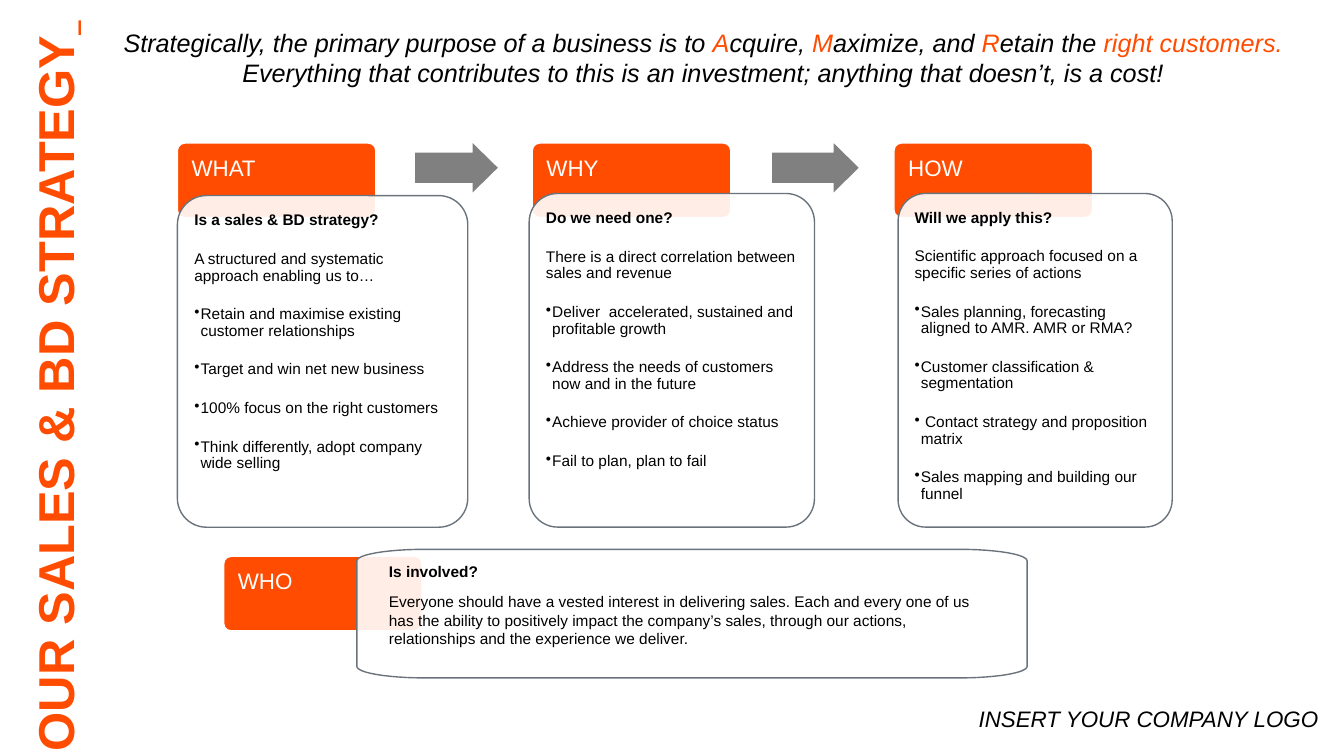
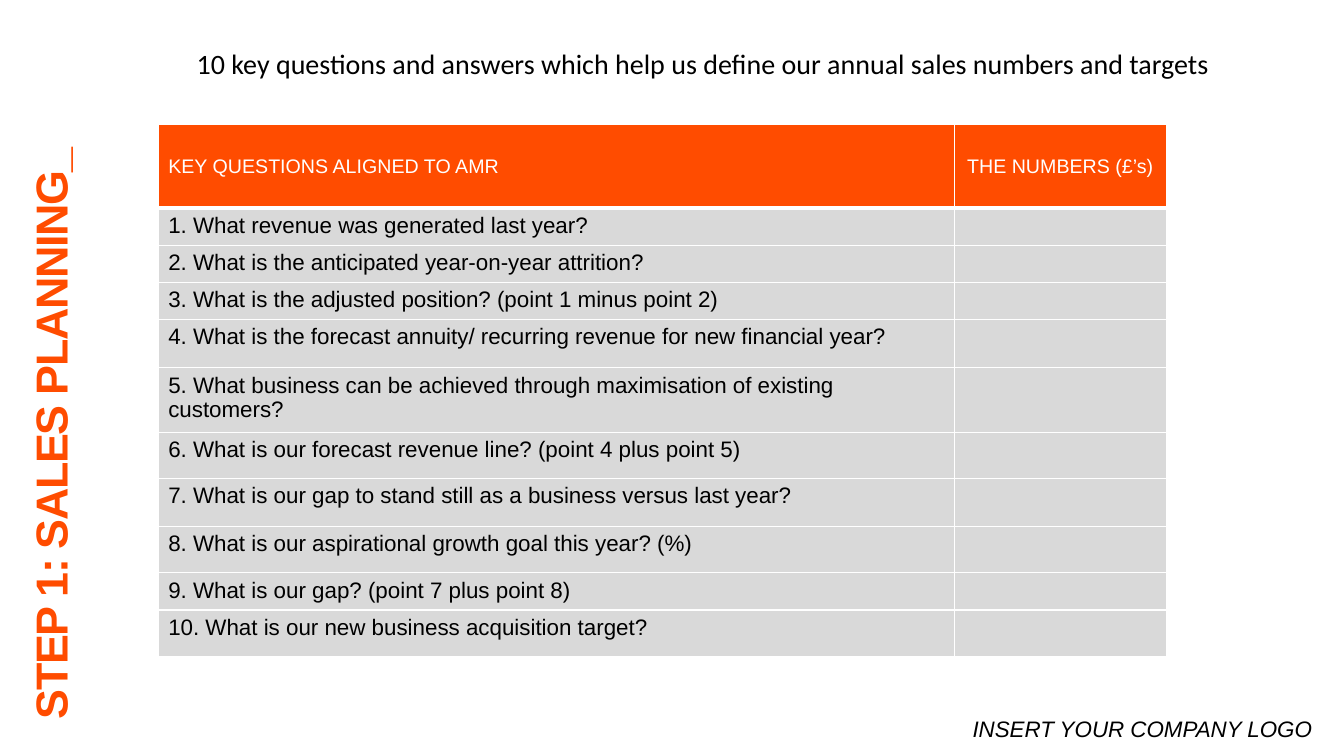
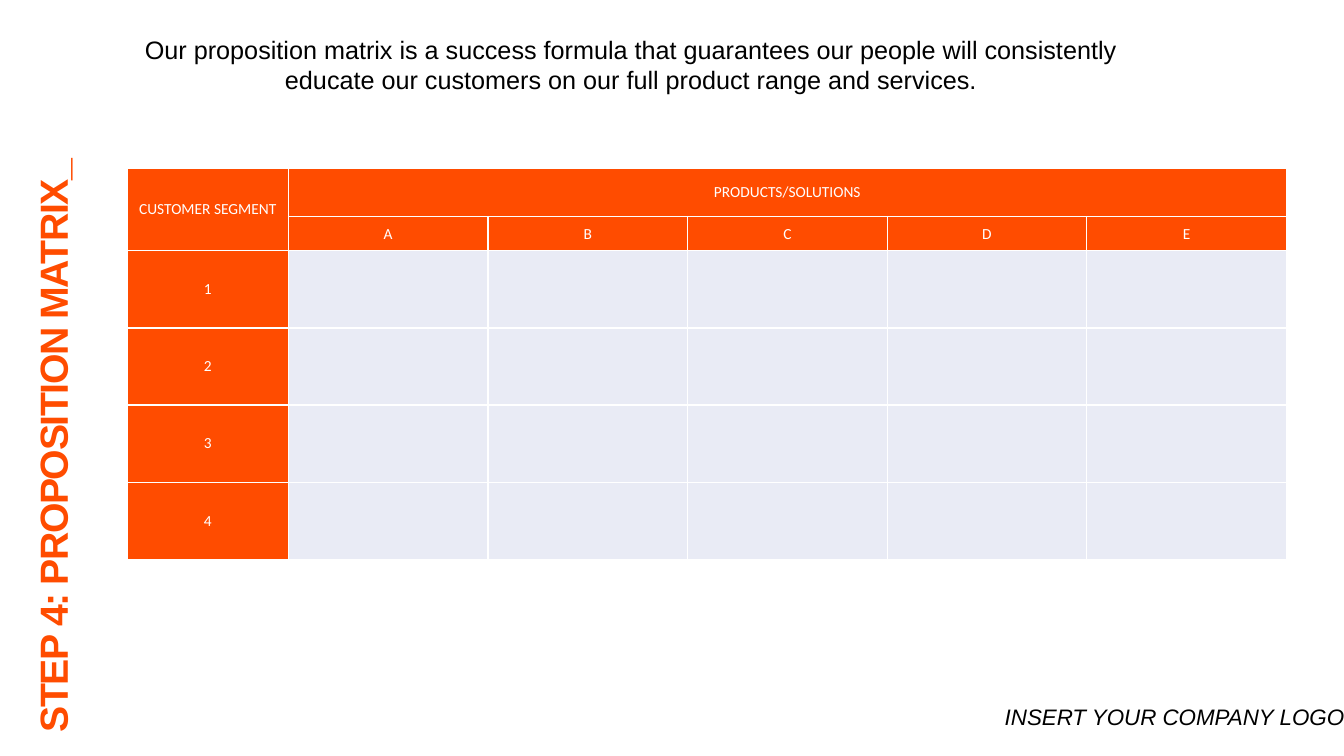
import math
from collections import namedtuple

import lxml.etree
import pptx
import pptx.dml.color
import pptx.enum.shapes
import pptx.enum.text
import pptx.oxml.ns
import pptx.util

Pt = pptx.util.Pt
Color = pptx.dml.color.RGBColor
Shape = pptx.enum.shapes.MSO_SHAPE
Align = pptx.enum.text.PP_ALIGN
Anchor = pptx.enum.text.MSO_ANCHOR
qn = pptx.oxml.ns.qn
Box = namedtuple("Box", "left top width height")

ORANGE = Color(0xFF, 0x4C, 0x00)
WHITE = Color(0xFF, 0xFF, 0xFF)
BLACK = Color(0x00, 0x00, 0x00)
GREY = Color(0x80, 0x80, 0x80)
SLATE = Color(0x6A, 0x73, 0x7B)
SILVER = Color(0xD9, 0xD9, 0xD9)
PALE_BLUE = Color(0xE9, 0xEB, 0xF5)
TITLE_ONLY = 5
TAB_WIDTH, TAB_HEIGHT = 141.8, 53.3

COLUMNS = [
    ("WHAT", 126.7, Box(126.7, 139.7, 207.4, 236.9), "Is a sales & BD strategy?",
     "A structured and systematic approach enabling us to…",
     ["Retain and maximise existing customer relationships",
      "Target and win net new business",
      "100% focus on the right customers",
      "Think differently, adopt company wide selling"]),
    ("WHY", 380.2, Box(378, 138.2, 203.8, 238.3), "Do we need one?",
     "There is a direct correlation between sales and revenue",
     ["Deliver  accelerated, sustained and profitable growth",
      "Address the needs of customers now and in the future",
      "Achieve provider of choice status",
      "Fail to plan, plan to fail"]),
    ("HOW", 638.6, Box(641.5, 138.2, 195.8, 238.3), "Will we apply this?",
     "Scientific approach focused on a specific series of actions",
     ["Sales planning, forecasting aligned to AMR. AMR or RMA?",
      "Customer classification & segmentation",
      " Contact strategy and proposition matrix",
      "Sales mapping and building our funnel"]),
]
QUESTIONS = [
    ("1. What revenue was generated last year?", 26.5),
    ("2. What is the anticipated year-on-year attrition?", 26.5),
    ("3. What is the adjusted position? (point 1 minus point 2)", 26.5),
    ("4. What is the forecast annuity/ recurring revenue for new financial year?", 34.5),
    ("5. What business can be achieved through maximisation of existing customers?", 46),
    ("6. What is our forecast revenue line? (point 4 plus point 5)", 33),
    ("7. What is our gap to stand still as a business versus last year?", 34.5),
    ("8. What is our aspirational growth goal this year? (%)", 33),
    ("9. What is our gap? (point 7 plus point 8)", 26.5),
    ("10. What is our new business acquisition target?", 33),
]


def points(box):
    return [Pt(length) for length in box]


def add_text(frame, text, size=11, color=BLACK, font="Arial", bold=False, italic=False,
             align=None, line=None, before=None, after=None, bullet=False, tracking=None):
    para = frame.add_paragraph() if frame.text else frame.paragraphs[0]
    para.alignment = align
    para.line_spacing = line
    para.space_before = None if before is None else Pt(before)
    para.space_after = None if after is None else Pt(after)
    if bullet:
        properties = para._p.get_or_add_pPr()
        properties.set("marL", str(Pt(4.5)))
        properties.set("indent", str(Pt(-4.5)))
        lxml.etree.SubElement(properties, qn("a:buChar")).set("char", "•")
    for words, shade in [(text, color)] if isinstance(text, str) else text:
        span = para.add_run()
        span.text = words
        span.font.name = font
        span.font.size = Pt(size)
        span.font.bold = bold
        span.font.italic = italic
        span.font.color.rgb = shade
        if tracking:
            span._r.get_or_add_rPr().set("spc", str(tracking))
    return para


def set_insets(frame, inset):
    frame.margin_left = frame.margin_right = Pt(inset)
    frame.margin_top = frame.margin_bottom = Pt(inset)


def style_shape(shape, fill, line=None, opacity=None):
    shape.shadow.inherit = False
    shape.fill.solid()
    shape.fill.fore_color.rgb = fill
    if opacity:
        color = shape._element.spPr.find(qn("a:solidFill"))[0]
        lxml.etree.SubElement(color, qn("a:alpha")).set("val", str(opacity * 1000))
    if line is None:
        shape.line.fill.background()
    else:
        shape.line.color.rgb = line
        shape.line.width = Pt(1)


def add_text_box(page, box, text, wrap=True, **style):
    frame = page.shapes.add_textbox(*points(box)).text_frame
    frame.word_wrap = wrap
    add_text(frame, text, **style)
    return frame


def add_page(deck, title, band, size, footer, tracking=None):
    page = deck.slides.add_slide(deck.slide_layouts[TITLE_ONLY])
    heading = page.shapes.title
    heading.left = Pt(band.left + (band.width - band.height) / 2)
    heading.top = Pt(band.top + (band.height - band.width) / 2)
    heading.width, heading.height = Pt(band.height), Pt(band.width)
    heading.rotation = 270
    frame = heading.text_frame
    frame.word_wrap = False
    frame.auto_size = pptx.enum.text.MSO_AUTO_SIZE.NONE
    frame.vertical_anchor = Anchor.TOP
    add_text(frame, title, size=size, color=ORANGE, bold=True, align=Align.JUSTIFY,
             before=0, tracking=tracking)
    add_text_box(page, Box(*footer, 260, 26.6), "INSERT YOUR COMPANY LOGO",
                 wrap=False, size=16, italic=True)
    return page


def add_tab(page, box, label):
    tab = page.shapes.add_shape(Shape.ROUNDED_RECTANGLE, *points(box))
    tab.adjustments[0] = 0.1
    style_shape(tab, ORANGE, WHITE)
    frame = tab.text_frame
    set_insets(frame, 8.6)
    frame.vertical_anchor = Anchor.TOP
    add_text(frame, label, size=16, color=WHITE, align=Align.LEFT, line=0.9)


def add_card(page, box, question, answer, bullets):
    card = page.shapes.add_shape(Shape.ROUNDED_RECTANGLE, *points(box))
    card.adjustments[0] = 0.1
    style_shape(card, WHITE, SLATE, opacity=90)
    frame = card.text_frame
    set_insets(frame, 6)
    frame.vertical_anchor = Anchor.TOP
    style = dict(align=Align.LEFT, line=0.9, after=15.7)
    add_text(frame, question, bold=True, **style)
    add_text(frame, answer, **style)
    for bullet in bullets:
        add_text(frame, bullet, bullet=True, **style)


def add_arrow(page, box):
    arrow = page.shapes.add_shape(Shape.RIGHT_ARROW, *points(box))
    arrow.adjustments[0] = 0.61
    arrow.adjustments[1] = 0.51
    style_shape(arrow, GREY)


def add_who_panel(page, box):
    radius_x, radius_y = box.width * 0.1, box.height * 0.09
    right, bottom = box.left + box.width, box.top + box.height
    centres = [(right - radius_x, bottom - radius_y), (box.left + radius_x, bottom - radius_y),
               (box.left + radius_x, box.top + radius_y), (right - radius_x, box.top + radius_y)]
    outline = []
    for corner, (x, y) in enumerate(centres):
        for step in range(13):
            angle = math.radians(90 * corner + 7.5 * step)
            outline.append((Pt(x + radius_x * math.cos(angle)),
                            Pt(y + radius_y * math.sin(angle))))
    builder = page.shapes.build_freeform(*outline[0])
    builder.add_line_segments(outline[1:], close=True)
    style_shape(builder.convert_to_shape(), WHITE, SLATE, opacity=90)
    frame = add_text_box(page, Box(box.left + 15.8, box.top + 5.8, 445, 68.4), "Is involved?",
                         bold=True, before=2.2, after=6)
    add_text(frame, "Everyone should have a vested interest in delivering sales. Each and every "
             "one of us has the ability to positively impact the company’s sales, through our "
             "actions, relationships and the experience we deliver.", before=2.2, after=6)


def add_grid(page, box, widths, heights):
    table = page.shapes.add_table(len(heights), len(widths), *points(box)).table
    table.first_row = table.horz_banding = False
    for column, width in zip(table.columns, widths):
        column.width = Pt(width)
    for row, height in zip(table.rows, heights):
        row.height = Pt(height)
    return table


def style_cell(cell, fill, inset=None, top=1, bottom=1):
    cell.fill.solid()
    cell.fill.fore_color.rgb = fill
    if inset is not None:
        set_insets(cell, inset)
    properties = cell._tc.get_or_add_tcPr()
    sides = [("a:lnL", 1), ("a:lnR", 1), ("a:lnT", top), ("a:lnB", bottom)]
    for position, (side, width) in enumerate(sides):
        border = lxml.etree.Element(qn(side), w=str(Pt(width)))
        solid = lxml.etree.SubElement(border, qn("a:solidFill"))
        lxml.etree.SubElement(solid, qn("a:srgbClr")).set("val", str(WHITE))
        properties.insert(position, border)


def add_question_table(page, box):
    heights = [60] + [height for _, height in QUESTIONS]
    table = add_grid(page, box, [box.width * 0.79, box.width * 0.21], heights)
    headers = [("KEY QUESTIONS ALIGNED TO AMR", Align.LEFT), ("THE NUMBERS (£’s) ", Align.CENTER)]
    for column, (header, align) in enumerate(headers):
        cell = table.cell(0, column)
        style_cell(cell, ORANGE, bottom=3)
        cell.vertical_anchor = Anchor.MIDDLE
        add_text(cell.text_frame, header, size=14, color=WHITE, align=align)
    for row, (question, _) in enumerate(QUESTIONS, 1):
        top = 3 if row == 1 else 1
        style_cell(table.cell(row, 0), SILVER, top=top)
        style_cell(table.cell(row, 1), SILVER, inset=0, top=top)
        add_text(table.cell(row, 0).text_frame, question, size=16)


def add_matrix(page, box):
    products, segments = "ABCDE", "1234"
    first_width, header_heights = 115, [34.5, 24.5]
    product_width = (box.width - first_width) / len(products)
    segment_height = (box.height - sum(header_heights)) / len(segments)
    table = add_grid(page, box, [first_width] + [product_width] * len(products),
                     header_heights + [segment_height] * len(segments))
    for row in range(len(table.rows)):
        for column in range(len(table.columns)):
            header = row < 2 or column == 0
            style_cell(table.cell(row, column), ORANGE if header else PALE_BLUE, inset=0.7)
    table.cell(0, 0).merge(table.cell(1, 0))
    table.cell(0, 1).merge(table.cell(0, len(products)))
    labels = {(0, 0): "CUSTOMER SEGMENT", (0, 1): "PRODUCTS/SOLUTIONS"}
    labels.update({(1, column): name for column, name in enumerate(products, 1)})
    labels.update({(row, 0): name for row, name in enumerate(segments, 2)})
    for position, label in labels.items():
        cell = table.cell(*position)
        cell.vertical_anchor = Anchor.MIDDLE
        add_text(cell.text_frame, label, color=WHITE, font="Calibri", align=Align.CENTER)


def build_strategy(deck):
    page = add_page(deck, "OUR SALES & BD STRATEGY", Box(13.3, 1.1, 51.1, 542.9), 36,
                    (692, 500.4))
    dash = page.shapes.title.text_frame.paragraphs[0].add_run()
    dash.text = "⎯"
    dash.font.name, dash.font.size, dash.font.bold = "Arial", Pt(36), True
    dash.font.color.rgb = ORANGE
    dash._r.get_or_add_rPr().set("baseline", "-25000")
    dash._r.get_or_add_rPr().set("spc", "-100")
    purpose = [("Strategically, the primary purpose of a business is to ", BLACK),
               ("A", ORANGE), ("cquire, ", BLACK), ("M", ORANGE), ("aximize, and ", BLACK),
               ("R", ORANGE), ("etain the ", BLACK), ("right customers. ", ORANGE),
               ("Everything that contributes to this is an investment; "
                "anything that doesn’t, is a cost!", BLACK)]
    add_text_box(page, Box(63.4, 15.8, 877.7, 62.6), purpose, size=18, italic=True,
                 align=Align.CENTER, before=3.6)
    for label, left, box, question, answer, bullets in COLUMNS:
        add_tab(page, Box(left, 102.2, TAB_WIDTH, TAB_HEIGHT), label)
        add_card(page, box, question, answer, bullets)
    for left, width in [(296.6, 59), (551.5, 61.9)]:
        add_arrow(page, Box(left, 102.2, width, 35.3))
    add_tab(page, Box(159.8, 397.4, TAB_WIDTH, TAB_HEIGHT), "WHO")
    add_who_panel(page, Box(254.9, 392.4, 478.8, 91.8))


def build_planning(deck):
    page = add_page(deck, "STEP 1: SALES PLANNING_", Box(12.6, 95.4, 46.1, 425.5), 32,
                    (687.6, 507.6), tracking=-100)
    add_question_table(page, Box(113, 88.8, 720, 380))
    add_text_box(page, Box(73.4, 29.5, 857.5, 45.4),
                 "10 key questions and answers which help us define our annual sales numbers "
                 "and targets", size=20, font="Calibri", align=Align.CENTER, before=4, after=6)


def build_matrix(deck):
    page = add_page(deck, "STEP 4: PROPOSITION MATRIX_", Box(16.9, 102.6, 41, 427.7), 28,
                    (710.6, 499), tracking=-100)
    add_text_box(page, Box(90.7, 20.9, 720, 51),
                 "Our proposition matrix is a success formula that guarantees our people will "
                 "consistently educate our customers on our full product range and services.",
                 size=18, align=Align.CENTER)
    add_matrix(page, Box(91, 120.2, 828, 279.4))


def main():
    deck = pptx.Presentation()
    deck.slide_width, deck.slide_height = Pt(960), Pt(540)
    build_strategy(deck)
    build_planning(deck)
    build_matrix(deck)
    deck.save("out.pptx")


if __name__ == "__main__":
    main()
